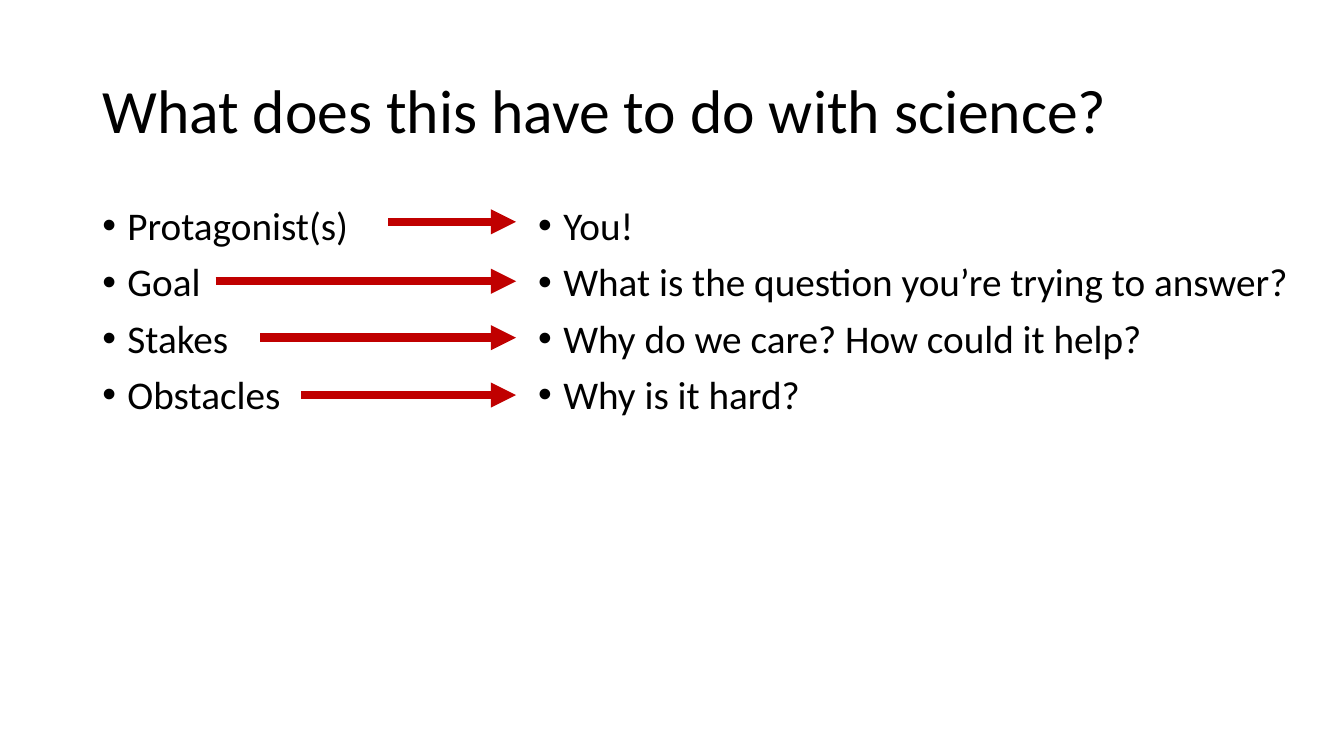
from lxml import etree
from pptx import Presentation, util as u
from pptx.dml.color import RGBColor
from pptx.enum import shapes, text
from pptx.oxml.ns import qn

HUES = {"ink": "000000", "arrow": "C00000"}
ROWS = [
    ("Protagonist(s)", "You!", 277.2, 158.4),
    ("Goal", "What is the question you’re trying to answer?", 154.1, 200.9),
    ("Stakes", "Why do we care? How could it help?", 185.8, 241.2),
    ("Obstacles", "Why is it hard?", 215.3, 282.2),
]
TIP = 368.6


class Deck:
    font = "Calibri"
    indent = 18

    def __init__(self, wide, high):
        self.file = Presentation()
        self.file.slide_width = u.Pt(wide)
        self.file.slide_height = u.Pt(high)
        self.slide = self.file.slides.add_slide(self.file.slide_layouts[6])

    def hue(self, name):
        return RGBColor.from_string(HUES[name])

    def apply(self, item, form):
        for key, value in form.items():
            setattr(item, key, value)

    def label(self, area, lines, size, anchor, bullet=False):
        box = self.slide.shapes.add_textbox(*map(u.Pt, area))
        frame = box.text_frame
        self.apply(frame, {"word_wrap": True, "vertical_anchor": anchor})
        frame.text = "\n".join(lines)
        for para in frame.paragraphs:
            self.apply(para, {"line_spacing": 0.9,
                              "space_before": u.Pt(10 if bullet else 0)})
            self.apply(para.font, {"name": self.font, "size": u.Pt(size)})
            para.font.color.rgb = self.hue("ink")
            if bullet:
                self.mark(para)

    def mark(self, para):
        props = para._p.get_or_add_pPr()
        props.set("marL", str(u.Pt(self.indent)))
        props.set("indent", str(-u.Pt(self.indent)))
        face = etree.Element(qn("a:buFont"), typeface="Arial")
        sign = etree.Element(qn("a:buChar"), char="•")
        spot = props.find(qn("a:spcBef"))
        spot.addnext(face)
        face.addnext(sign)

    def arrow(self, start, end, y):
        link = self.slide.shapes.add_connector(
            shapes.MSO_CONNECTOR.STRAIGHT, *map(u.Pt, (start, y, end, y)))
        link.line.width = u.Pt(6)
        link.line.color.rgb = self.hue("arrow")
        etree.SubElement(link.line._get_or_add_ln(), qn("a:tailEnd"),
                         type="triangle")
        etree.SubElement(link._element.spPr, qn("a:effectLst"))


def main():
    deck = Deck(960, 540)
    anchor = text.MSO_ANCHOR
    deck.label((66, 28.8, 828, 104.4),
               ["What does this have to do with science?"], 44, anchor.MIDDLE)
    terms, replies, starts, levels = zip(*ROWS)
    deck.label((66, 144, 247, 342.7), terms, 28, anchor.TOP, True)
    deck.label((377.3, 144, 561.6, 355.7), replies, 28, anchor.TOP, True)
    for start, level in zip(starts, levels):
        deck.arrow(start, TIP, level)
    deck.file.save("out.pptx")


if __name__ == "__main__":
    main()
